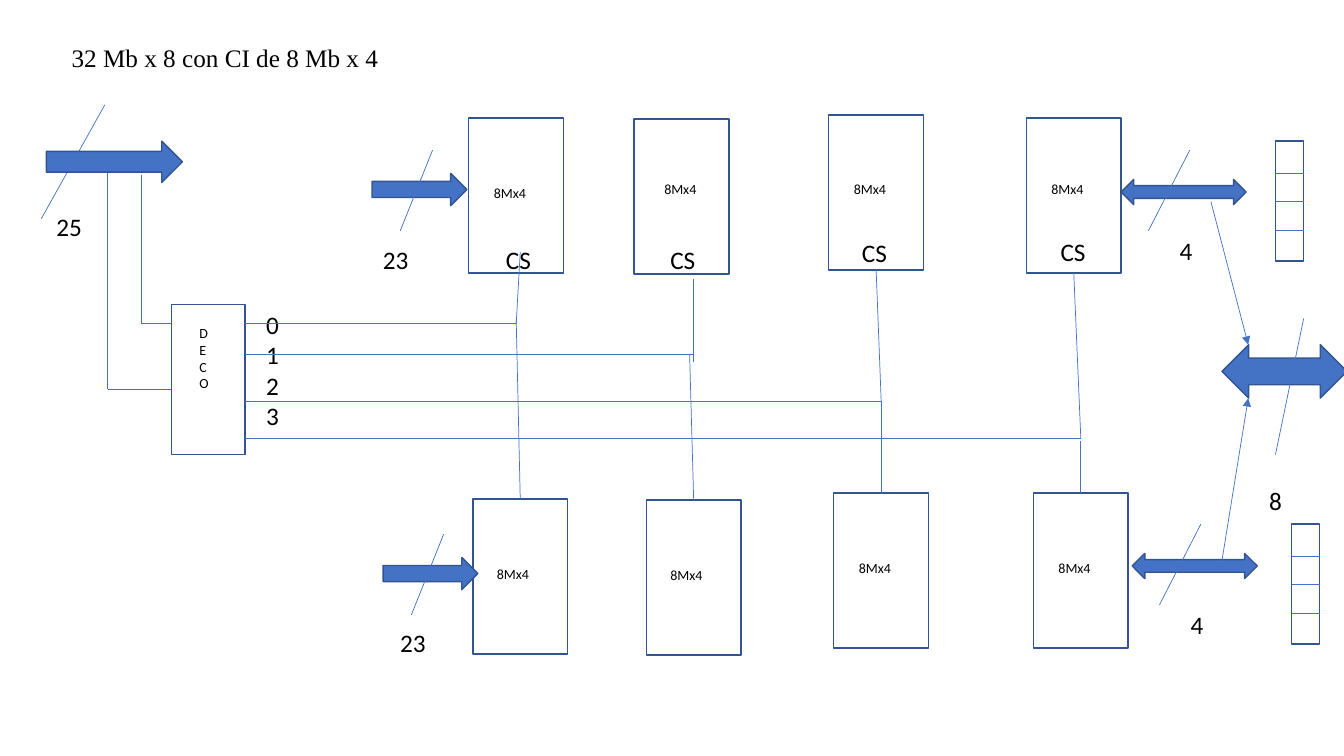
from lxml import etree
from pptx import Presentation
from pptx.dml.color import RGBColor
from pptx.enum import shapes, text
from pptx.oxml.ns import qn
from pptx.util import Emu, Pt

PX = 9144  # 100 px to the inch
BLUE = RGBColor(0x44, 0x72, 0xC4)
NAVY = RGBColor(0x32, 0x54, 0x91)
BLACK = RGBColor(0x00, 0x00, 0x00)
SHAPE = shapes.MSO_SHAPE
TOP, BOTTOM = 0, 2


def px(*lengths):
    return [Emu(length * PX) for length in lengths]


class Diagram:
    """Holds the page and draws each kind of element in one style."""

    def __init__(self, page):
        self.page = page

    def format_text(self, frame, size, font="Calibri"):
        for para in frame.paragraphs:
            style = {"name": font, "size": Pt(size), "bold": False}
            for key, value in style.items():
                setattr(para.font, key, value)
            para.font.color.rgb = BLACK

    def title(self, words, left, top, width, height, indent):
        box = self.page.shapes.title
        place = zip(("left", "top", "width", "height"), px(left, top, width, height))
        for key, value in place:
            setattr(box, key, value)
        frame = box.text_frame
        frame.text = words
        layout = {"word_wrap": True, "vertical_anchor": text.MSO_ANCHOR.TOP,
                  "auto_size": text.MSO_AUTO_SIZE.NONE}
        for key, value in layout.items():
            setattr(frame, key, value)
        para = frame.paragraphs[0]
        para.alignment = text.PP_ALIGN.JUSTIFY
        para.line_spacing = 1.5
        properties = para._p.get_or_add_pPr()
        properties.set("marL", str(indent * PX))
        properties.set("indent", "0")
        self.format_text(frame, 18, "Times New Roman")

    def label(self, words, left, top, width, height=40, size=18):
        box = self.page.shapes.add_textbox(*px(left, top, width, height))
        frame = box.text_frame
        frame.word_wrap = True
        frame.text = words
        self.format_text(frame, size)

    def shape(self, kind, left, top, width, height, fill=None):
        shape = self.page.shapes.add_shape(kind, *px(left, top, width, height))
        shape.shadow.inherit = False
        if fill is None:
            shape.fill.background()
        else:
            shape.fill.solid()
            shape.fill.fore_color.rgb = fill
        shape.line.color.rgb = NAVY
        shape.line.width = Pt(1)
        return shape

    def wire(self, x1, y1, x2, y2, begin=None, end=None, arrow=False):
        """Draw a line; begin and end are (shape, side) pairs to join."""
        wire = self.page.shapes.add_connector(
            shapes.MSO_CONNECTOR.STRAIGHT, *px(x1, y1, x2, y2))
        wire.line.color.rgb = BLUE
        wire.line.width = Pt(0.5)
        properties = wire.element.spPr
        if arrow:
            outline = properties.find(qn("a:ln"))
            etree.SubElement(outline, qn("a:tailEnd"), type="triangle")
        etree.SubElement(properties, qn("a:effectLst"))
        if begin:
            wire.begin_connect(*begin)
        if end:
            wire.end_connect(*end)

    def chip(self, left, top, name_left, name_top):
        chip = self.shape(SHAPE.RECTANGLE, left, top, 94, 154)
        self.label("8Mx4", name_left, name_top, 73, 27, size=10)
        return chip

    def address_bus(self, left, top, label_left, label_top):
        self.shape(SHAPE.RIGHT_ARROW, left, top, 94, 32, BLUE)
        self.wire(left + 60, top - 23, left + 28, top + 57)
        self.label("23", label_left, label_top, 59)

    def data_bus(self, left, top):
        self.shape(SHAPE.LEFT_RIGHT_ARROW, left, top, 124, 25, BLUE)
        self.wire(left + 68, top - 29, left + 27, top + 51)
        self.label("4", left + 48, top + 51, 41)

    def nibble(self, left, top):
        self.shape(SHAPE.RECTANGLE, left, top, 28, 119)
        for offset in (32, 60, 89):
            self.wire(left, top + offset, left + 28, top + offset)


def draw_decoder(diagram):
    diagram.wire(104, 104, 41, 217)
    diagram.shape(SHAPE.RIGHT_ARROW, 46, 140, 135, 41, BLUE)
    diagram.label("25", 46, 205, 55)
    diagram.shape(SHAPE.RECTANGLE, 170, 302, 73, 149)
    diagram.label("D\nE\nC\nO", 188, 317, 30, 77, size=10)
    for x, top, bottom in ((140, 174, 321), (107, 172, 386)):
        diagram.wire(x, top, x, bottom)
        diagram.wire(x, bottom, 170, bottom)
    diagram.label("0\n1\n2\n3", 254, 302, 41, 131)


def draw_banks(diagram):
    # chip left, top, then left and top of its name
    upper = [diagram.chip(*place) for place in (
        (465, 117, 480, 178), (629, 118, 649, 174),
        (822, 114, 837, 174), (1018, 117, 1033, 174))]
    lower = [diagram.chip(*place) for place in (
        (469, 495, 483, 556), (641, 496, 655, 557),
        (827, 489, 842, 550), (1025, 489, 1040, 550))]
    for left, top in ((492, 237), (655, 237), (845, 231), (1042, 230)):
        diagram.label("CS", left, top, 48)

    for x, y in ((512, 321), (688, 352), (874, 398), (1072, 435)):
        diagram.wire(243, y, x, y)
    diagram.wire(516, 250, 512, 321)
    diagram.wire(688, 277, 688, 359)
    diagram.wire(869, 271, 874, 398, begin=(upper[2], BOTTOM))
    diagram.wire(1066, 270, 1072, 435, begin=(upper[3], BOTTOM))
    starts = ((512, 317), (684, 352), (874, 398), (1072, 438))
    for (x, y), chip in zip(starts, lower):
        diagram.wire(x, y, x, 489, end=(chip, TOP))


def draw_buses(diagram):
    diagram.address_bus(369, 172, 370, 237)
    diagram.address_bus(380, 553, 387, 617)
    diagram.data_bus(1112, 178)
    diagram.data_bus(1123, 549)
    diagram.nibble(1265, 140)
    diagram.nibble(1281, 520)
    diagram.shape(SHAPE.LEFT_RIGHT_ARROW, 1212, 342, 124, 53, BLUE)
    diagram.wire(1201, 200, 1238, 342, arrow=True)
    diagram.wire(1212, 556, 1238, 395, arrow=True)
    diagram.wire(1293, 316, 1265, 451)
    diagram.label("8", 1249, 477, 60)


def main():
    deck = Presentation()
    deck.slide_width, deck.slide_height = px(1333, 750)
    title_only = deck.slide_layouts[5]
    diagram = Diagram(deck.slides.add_slide(title_only))
    diagram.title("32 Mb x 8 con CI de 8 Mb x 4", 15, 22, 382, 50, indent=46)
    draw_decoder(diagram)
    draw_banks(diagram)
    draw_buses(diagram)
    deck.save("out.pptx")


if __name__ == "__main__":
    main()
